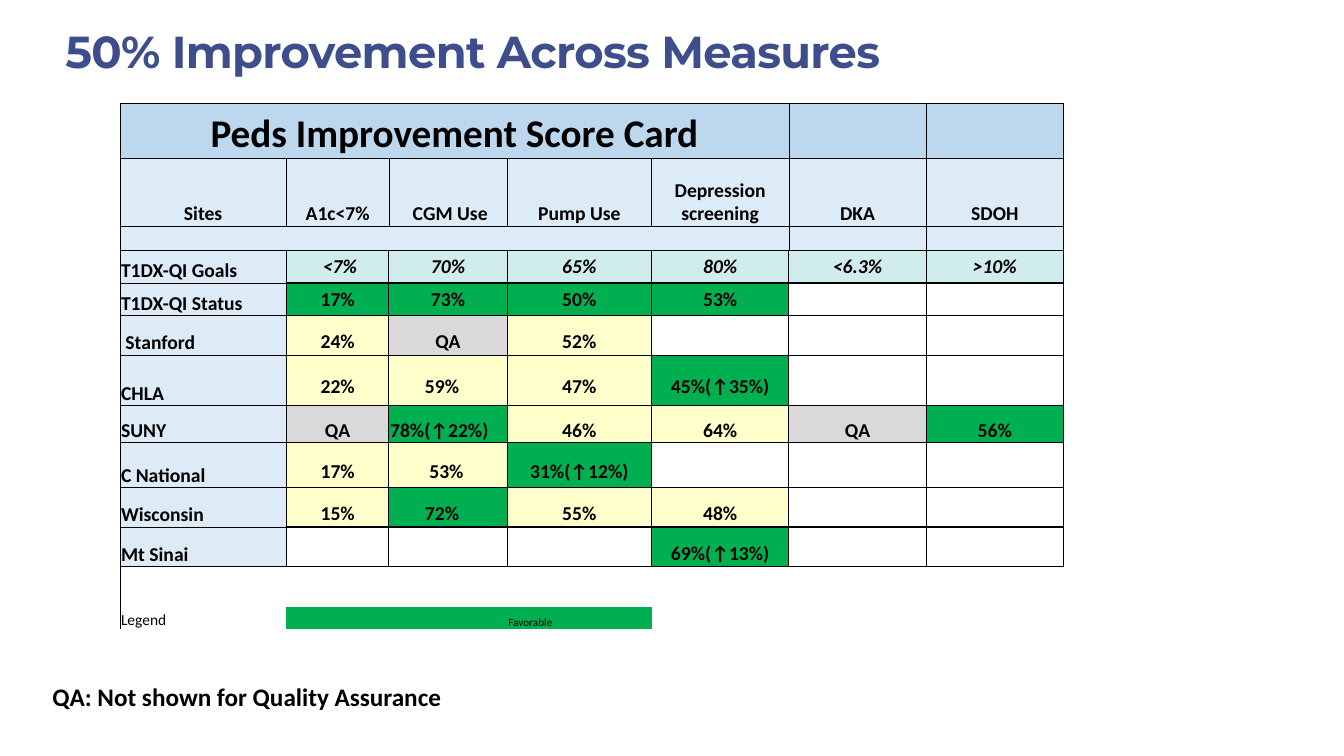
from dataclasses import dataclass

from lxml import etree
from pptx import Presentation
from pptx import util as u
from pptx.dml.color import RGBColor
from pptx.enum import text
from pptx.oxml.ns import qn


@dataclass(frozen=True)
class Theme:
    heading_font: str = "Montserrat"
    body_font: str = "Calibri"
    heading: str = "3E4E8D"
    ink: str = "000000"
    banner: str = "BDD7EE"
    header: str = "DDEBF7"
    goal: str = "D0ECEC"
    favorable: str = "00B050"
    measured: str = "FFFFCC"
    withheld: str = "D9D9D9"
    blank: str = "FFFFFF"
    title_pt: int = 32
    banner_pt: int = 28
    note_pt: int = 18
    cell_pt: int = 14
    legend_pt: int = 11
    key_pt: int = 8
    thin_pt: float = 0.5
    thick_pt: float = 1


THEME = Theme()
LEFT, CENTER = text.PP_ALIGN.LEFT, text.PP_ALIGN.CENTER
TOP, MIDDLE, BOTTOM = (text.MSO_ANCHOR.TOP, text.MSO_ANCHOR.MIDDLE,
                       text.MSO_ANCHOR.BOTTOM)
NO_GRID_STYLE = "{2D5ABB26-0587-4C30-8999-92F81FD0307C}"

COLUMN_CM = [4.2, 2.58, 2.98, 3.64, 3.46, 3.46, 3.46]
ROW_CM = [1.38, 1.71, 0.6, 0.83, 0.82, 1, 1.27, 0.93, 1.13, 1, 1, 1.02, 0.56]
MEASURES = ["Sites", "A1c<7%", " CGM Use", "Pump Use",
            "Depression screening", "DKA", "SDOH"]
GOALS = ["T1DX-QI Goals", " <7%", "70%", "65%", "80%", "<6.3%", ">10%"]
SCORES = [
    ["T1DX-QI Status", "17%", "73%", "50%", "53%", "", ""],
    [" Stanford", "24%", "QA", "52%", "", "", ""],
    ["CHLA", "22%", "59%", "47%", "45%(↑35%)", "", ""],
    ["SUNY", "QA", "78%(↑22%)", "46%", "64%", "QA", "56%"],
    ["C National", "17%", "53%", "31%(↑12%)", "", "", ""],
    ["Wisconsin", "15%", "72%", "55%", "48%", "", ""],
    ["Mt Sinai", "", "", "", "69%(↑13%)", "", ""],
]
# Columns of each site that reached a favorable result
FAVORABLE = {"T1DX-QI Status": [1, 2, 3, 4], "CHLA": [4], "SUNY": [2, 6],
             "C National": [3], "Wisconsin": [2], "Mt Sinai": [4]}
# Left-aligned CGM results and their indents
CGM_INDENT_CM = {"CHLA": 0.88, "SUNY": 0, "C National": 0.99, "Wisconsin": 0.88}
GOAL_ROW, SCORE_ROW = 3, 4
SPACER_ROW, LEGEND_ROW = 11, 12


def style(paragraph, size, bold=True, italic=False, color=THEME.ink,
          name=THEME.body_font):
    font = paragraph.font
    font.name, font.size = name, u.Pt(size)
    font.bold, font.italic = bold, italic
    font.color.rgb = RGBColor.from_string(color)


def set_borders(cell, **widths):
    """Draw the named sides (L, R, T, B) and clear the others."""
    properties = cell._tc.get_or_add_tcPr()
    for side in "LRTB":
        width = widths.get(side, 0)
        line = etree.SubElement(properties, qn(f"a:ln{side}"), w=str(u.Pt(width)))
        if width:
            fill = etree.SubElement(line, qn("a:solidFill"))
            etree.SubElement(fill, qn("a:srgbClr"), val=THEME.ink)
        else:
            etree.SubElement(line, qn("a:noFill"))


def fill_cell(cell, wording="", fill=None, size=THEME.cell_pt, align=CENTER,
              anchor=MIDDLE, spacing=None, indent=0, bold=True, italic=False):
    if fill:
        cell.fill.solid()
        cell.fill.fore_color.rgb = RGBColor.from_string(fill)
    else:
        cell.fill.background()
    cell.margin_left = cell.margin_right = cell.margin_top = u.Cm(0.03)
    cell.margin_bottom = 0
    cell.vertical_anchor = anchor
    paragraph = cell.text_frame.paragraphs[0]
    if not wording:
        # Keep empty cells from stretching their row
        etree.SubElement(paragraph._p, qn("a:endParaRPr"),
                         sz=str(THEME.key_pt * 100))
        return
    paragraph.text = wording
    paragraph.alignment = align
    if spacing:
        paragraph.line_spacing = spacing
    if indent:
        paragraph._p.get_or_add_pPr().set("marL", str(u.Cm(indent)))
    style(paragraph, size, bold, italic)


def rule_grid(table):
    thin, thick = THEME.thin_pt, THEME.thick_pt
    for row in range(len(ROW_CM)):
        for column in range(len(COLUMN_CM)):
            if row < GOAL_ROW:
                sides = dict.fromkeys("LRTB", thin)
            elif row < SPACER_ROW:
                sides = dict.fromkeys("LRTB", thick)
                if column == 0:
                    sides.update(L=thin, T=thin, B=thin)
                elif row == GOAL_ROW:
                    sides["T"] = thin
            else:
                sides = {"L": thin} if column == 0 else {}
                if row == SPACER_ROW:
                    sides["T"] = thick if column else thin
            set_borders(table.cell(row, column), **sides)


def fill_headings(table):
    for column, (measure, goal) in enumerate(zip(MEASURES, GOALS)):
        fill_cell(table.cell(0, column), "" if column else "Peds Improvement Score Card",
                  THEME.banner, THEME.banner_pt, anchor=BOTTOM)
        fill_cell(table.cell(1, column), measure, THEME.header, anchor=BOTTOM)
        fill_cell(table.cell(2, column), fill=THEME.header)
        if column:
            fill_cell(table.cell(GOAL_ROW, column), goal, THEME.goal, italic=True)
        else:
            fill_cell(table.cell(GOAL_ROW, 0), goal, THEME.header,
                      align=LEFT, anchor=BOTTOM)
    for row in (0, 2):
        table.cell(row, 0).merge(table.cell(row, 4))


def score_fill(site, column, score):
    if column in FAVORABLE.get(site, []):
        return THEME.favorable
    return {"": THEME.blank, "QA": THEME.withheld}.get(score, THEME.measured)


def fill_scores(table):
    for row, (site, *scores) in enumerate(SCORES, SCORE_ROW):
        spacing = 1.5 if row > SCORE_ROW else None
        fill_cell(table.cell(row, 0), site, THEME.header, align=LEFT,
                  anchor=BOTTOM, spacing=spacing)
        for column, score in enumerate(scores, 1):
            indented = column == 2 and site in CGM_INDENT_CM
            fill_cell(table.cell(row, column), score,
                      score_fill(site, column, score),
                      align=LEFT if indented else CENTER,
                      anchor=TOP if indented and site == "SUNY" else MIDDLE,
                      spacing=spacing,
                      indent=CGM_INDENT_CM[site] if indented else 0)


def fill_legend(table):
    for column in range(len(COLUMN_CM)):
        blank = THEME.blank if column > 3 else None
        fill_cell(table.cell(SPACER_ROW, column), fill=blank)
        wording = {0: "Legend", 3: "Favorable"}.get(column, "")
        fill_cell(table.cell(LEGEND_ROW, column), wording,
                  THEME.favorable if 1 <= column <= 3 else blank,
                  THEME.key_pt if column else THEME.legend_pt,
                  align=LEFT, anchor=BOTTOM, bold=False)


def add_score_card(slide):
    frame = slide.shapes.add_table(len(ROW_CM), len(COLUMN_CM), u.Cm(3.02), u.Cm(2.61),
                                   u.Cm(sum(COLUMN_CM)), u.Cm(sum(ROW_CM)))
    table = frame.table
    table.first_row = table.horz_banding = False
    table._tbl.tblPr.find(qn("a:tableStyleId")).text = NO_GRID_STYLE
    for column, width in zip(table.columns, COLUMN_CM):
        column.width = u.Cm(width)
    for row, height in zip(table.rows, ROW_CM):
        row.height = u.Cm(height)
    rule_grid(table)
    fill_headings(table)
    fill_scores(table)
    fill_legend(table)


def place_title(slide, wording):
    title = slide.shapes.title
    title.left, title.top, title.width, title.height = (
        u.Cm(1.52), u.Cm(0.64), u.Cm(30.48), u.Cm(1.27))
    frame = title.text_frame
    frame.text = wording
    frame.auto_size = text.MSO_AUTO_SIZE.NONE
    frame.vertical_anchor = MIDDLE
    frame.margin_left = frame.margin_right = u.Cm(0.13)
    frame.margin_top = frame.margin_bottom = u.Cm(0.13)
    paragraph = frame.paragraphs[0]
    paragraph.alignment = LEFT
    style(paragraph, THEME.title_pt, color=THEME.heading, name=THEME.heading_font)
    paragraph.runs[0]._r.get_or_add_rPr().set("spc", "-50")


def add_note(slide, wording):
    note = slide.shapes.add_textbox(u.Cm(1.07), u.Cm(17.04), u.Cm(16.94), u.Cm(1.02))
    note.text_frame.word_wrap = True
    note.text_frame.text = wording
    style(note.text_frame.paragraphs[0], THEME.note_pt)


def main():
    deck = Presentation()
    deck.slide_width, deck.slide_height = u.Cm(33.87), u.Cm(19.05)
    slide = deck.slides.add_slide(deck.slide_layouts[5])
    place_title(slide, "50% Improvement Across Measures")
    add_score_card(slide)
    add_note(slide, "QA: Not shown for Quality Assurance")
    deck.save("out.pptx")


if __name__ == "__main__":
    main()
